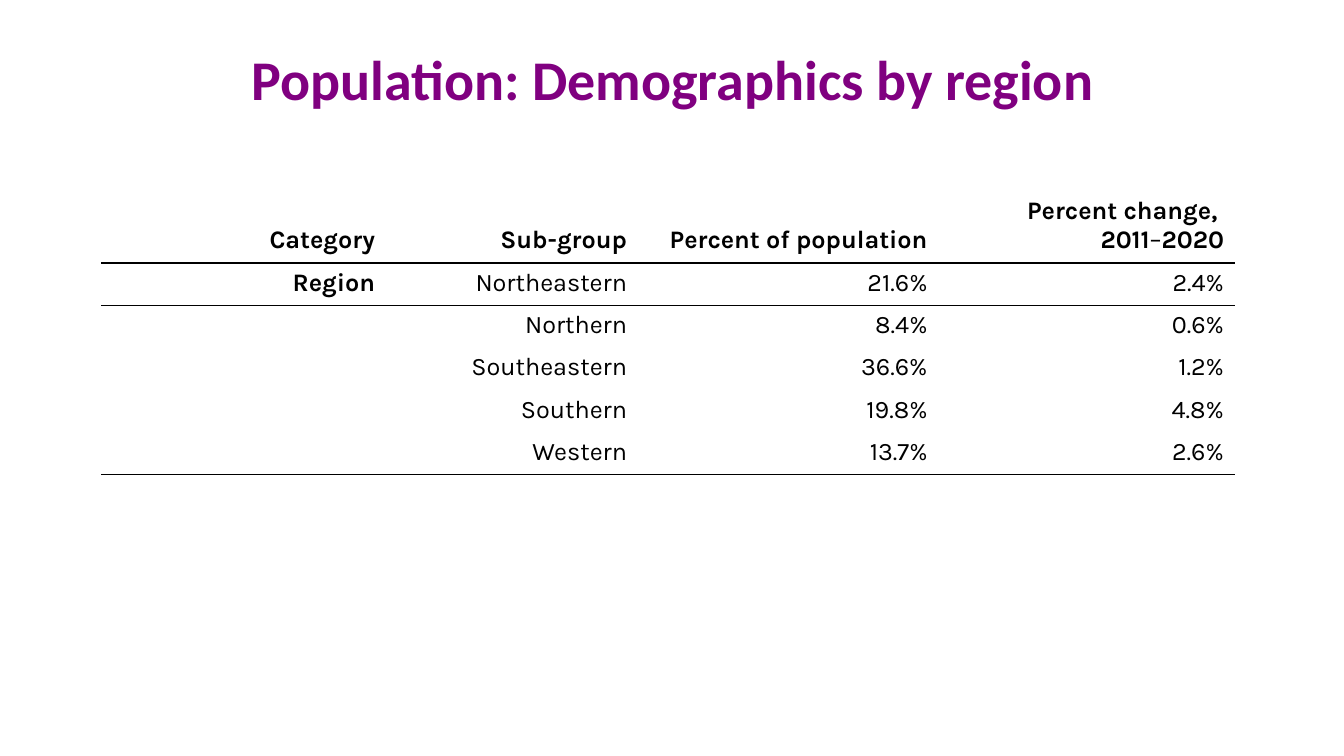
from lxml.etree import SubElement
from pptx import Presentation
from pptx.dml.color import RGBColor
from pptx.enum.text import MSO_ANCHOR, PP_ALIGN
from pptx.oxml import parse_xml
from pptx.oxml.ns import nsdecls, qn
from pptx.util import Inches, Pt

THEME = {
    "title": {"name": "Calibri", "size": Pt(40), "bold": True},
    "table": {"name": "Karla", "size": Pt(18)},
    "title_color": RGBColor(0x80, 0x00, 0x80),
    "text_color": RGBColor(0, 0, 0),
    "rule_color": "000000",
}
COLUMN_WIDTHS = [2.81, 2.5, 2.98, 2.94]
ROW_HEIGHTS = [0.73] + [0.42] * 5
RULES_BELOW = {0: 1.5, 1: 1, 5: 1}  # row: line width in points

# Each cell holds paragraphs; each paragraph holds (text, bold) spans.
HEADER = [
    [[("Category", True)]],
    [[("Sub-group", True)]],
    [[("Percent of population", True)]],
    [[("Percent change, ", True)], [("2011", True), ("–", False), ("2020", True)]],
]
REGIONS = [
    ("Region", "Northeastern", "21.6%", "2.4%"),
    ("", "Northern", "8.4%", "0.6%"),
    ("", "Southeastern", "36.6%", "1.2%"),
    ("", "Southern", "19.8%", "4.8%"),
    ("", "Western", "13.7%", "2.6%"),
]
ROWS = [HEADER] + [
    [[[(text, column == 0)]] for column, text in enumerate(region)]
    for region in REGIONS
]


def style_font(font, formats, color):
    for name, value in formats.items():
        setattr(font, name, value)
    font.color.rgb = color


def add_rule(cell, side, points):
    """Draw one horizontal cell border; side is lnT or lnB."""
    properties = cell._tc.get_or_add_tcPr()
    line = parse_xml(f'<a:{side} {nsdecls("a")} w="{Pt(points)}"/>')
    fill = SubElement(line, qn("a:solidFill"))
    SubElement(fill, qn("a:srgbClr"), val=THEME["rule_color"])
    properties.insert(len(properties.findall(qn("a:lnT"))), line)


deck = Presentation()
deck.slide_width, deck.slide_height = Inches(13.33), Inches(7.5)
page = deck.slides.add_slide(deck.slide_layouts[5])

title = page.shapes.title
title.left, title.top = Inches(0.67), Inches(0.19)
title.width, title.height = Inches(12), Inches(1.16)
title.text_frame.text = "Population: Demographics by region"
title.text_frame.vertical_anchor = MSO_ANCHOR.MIDDLE
heading = title.text_frame.paragraphs[0]
heading.alignment = PP_ALIGN.CENTER
style_font(heading.runs[0].font, THEME["title"], THEME["title_color"])

table = page.shapes.add_table(
    len(ROWS), len(COLUMN_WIDTHS), Inches(1.01), Inches(1.88),
    Inches(sum(COLUMN_WIDTHS)), Inches(sum(ROW_HEIGHTS)),
).table
table.first_row = table.horz_banding = False
for column, width in zip(table.columns, COLUMN_WIDTHS):
    column.width = Inches(width)

for row_index, (row, height) in enumerate(zip(ROWS, ROW_HEIGHTS)):
    table.rows[row_index].height = Inches(height)
    for column_index, paragraphs in enumerate(row):
        cell = table.cell(row_index, column_index)
        cell.fill.background()
        if row_index == 0:
            cell.vertical_anchor = MSO_ANCHOR.BOTTOM
            cell.margin_bottom = Inches(0.08)
        for side, rule_row in (("lnT", row_index - 1), ("lnB", row_index)):
            if rule_row in RULES_BELOW:
                add_rule(cell, side, RULES_BELOW[rule_row])
        for index, spans in enumerate(paragraphs):
            frame = cell.text_frame
            para = frame.add_paragraph() if index else frame.paragraphs[0]
            para.alignment = PP_ALIGN.RIGHT
            for text, bold in spans:
                if text:
                    span = para.add_run()
                    span.text = text
                    style_font(span.font, {**THEME["table"], "bold": bold},
                               THEME["text_color"])

deck.save("out.pptx")
